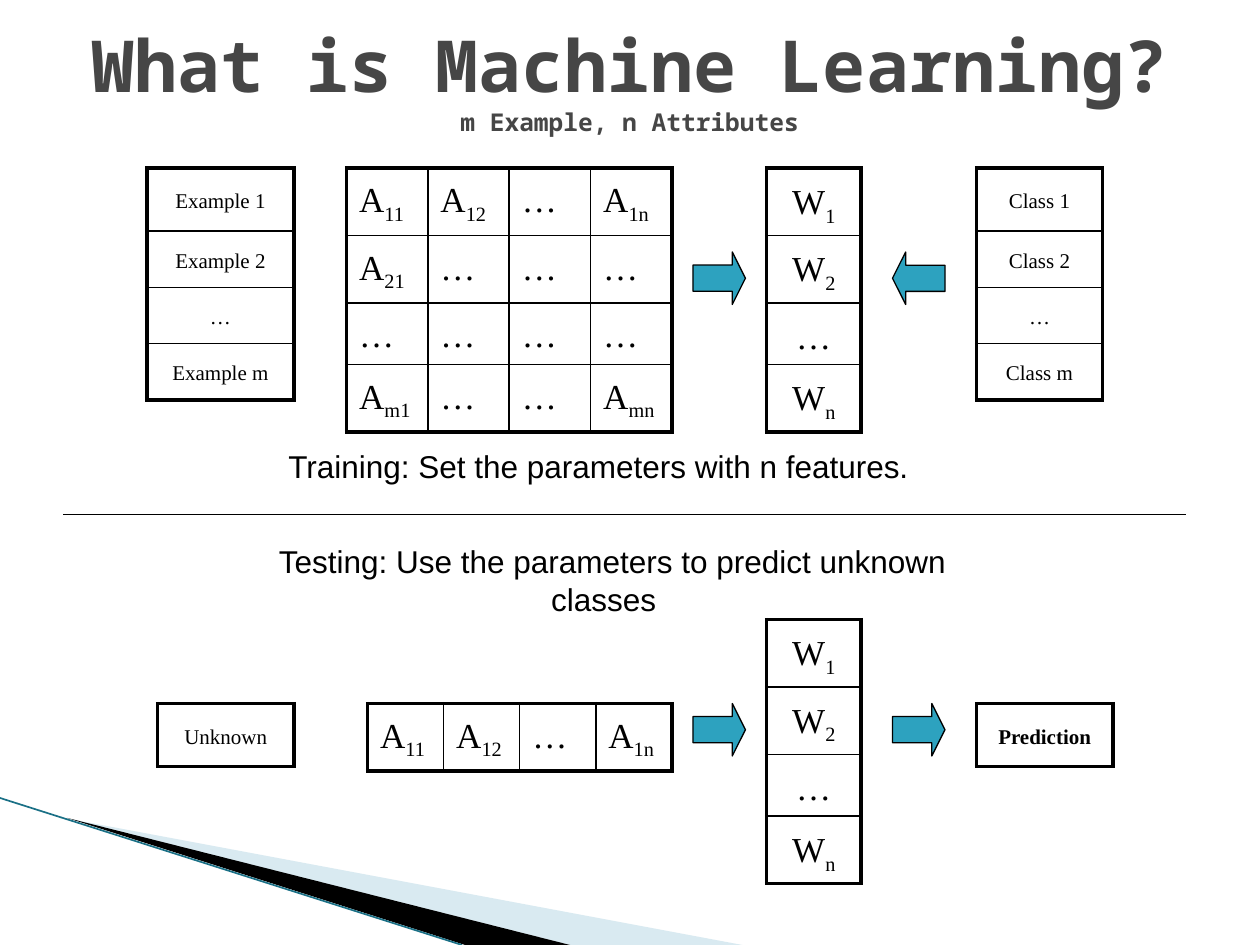
from lxml import etree
from pptx import Presentation
from pptx.dml.color import RGBColor
from pptx.enum.shapes import MSO_CONNECTOR, MSO_SHAPE
from pptx.enum.text import MSO_ANCHOR, PP_ALIGN
from pptx.oxml.ns import qn
from pptx.util import Inches, Pt

STRAIGHT = MSO_CONNECTOR.STRAIGHT
ARROW = MSO_SHAPE.RIGHT_ARROW
MIDDLE, TOP = MSO_ANCHOR.MIDDLE, MSO_ANCHOR.TOP
CENTER, LEFT = PP_ALIGN.CENTER, PP_ALIGN.LEFT

BLACK = RGBColor(0, 0, 0)
GREY = RGBColor(0x46, 0x46, 0x46)
TEAL = RGBColor(0x2D, 0xA2, 0xBF)
DEEP = RGBColor(0x1A, 0x70, 0x86)
PALE = RGBColor(0xA0, 0xCB, 0xDC)

deck = Presentation()
deck.slide_width = Inches(10)
deck.slide_height = Inches(7.5)
UNIT = deck.slide_width / 120


def grid(*nums):
    return [round(n * UNIT) for n in nums]


def add_run(para, text, size, face, color=BLACK, bold=False):
    run = para.add_run()
    run.text = text
    font = run.font
    font.size, font.name, font.bold = Pt(size), face, bold
    font.color.rgb = color
    return run


slide = deck.slides.add_slide(deck.slide_layouts[5])
shapes = slide.shapes

wedges = [
    ([(6.6, 78), (70.7, 90), (54.3, 90)], PALE, 40),
    ([(6.4, 77.9), (54.3, 90), (44.3, 90)], BLACK, 100),
]
for points, color, alpha in wedges:
    start, *rest = [grid(*point) for point in points]
    form = shapes.build_freeform(*start)
    form.add_line_segments(rest)
    wedge = form.convert_to_shape()
    wedge.shadow.inherit = False
    wedge.fill.solid()
    wedge.fill.fore_color.rgb = color
    wedge.line.fill.background()
    tint = wedge._element.spPr.find(".//" + qn("a:srgbClr"))
    etree.SubElement(tint, qn("a:alpha"), val=str(alpha * 1000))

rules = [((0, 76, 44, 90), DEEP, 0.95), ((6, 49, 113, 49), BLACK, 0.75)]
for ends, color, width in rules:
    rule = shapes.add_connector(STRAIGHT, *grid(*ends))
    rule.line.color.rgb = color
    rule.line.width = Pt(width)
    etree.SubElement(rule._element.spPr, qn("a:effectLst"))

title = shapes.title
title.left, title.top, title.width, title.height = grid(6, 0, 108, 15)
title.text_frame.vertical_anchor = MIDDLE
para = title.text_frame.paragraphs[0]
para.alignment = CENTER
add_run(para, "What is Machine Learning?", 41, "Noto Sans Mono", GREY, True)
para.add_line_break()
add_run(para, "m Example, n Attributes", 14, "Noto Sans Mono", GREY, True)

notes = [
    ((25, 42, 64, 4.8), "Training: Set the parameters with n features.", 0),
    ((22, 51, 71, 8.5),
     "Testing: Use the parameters to predict unknown classes", 1.67),
]
for area, text, indent in notes:
    frame = shapes.add_textbox(*grid(*area)).text_frame
    frame.word_wrap = True
    para = frame.paragraphs[0]
    para.alignment = CENTER
    para._p.get_or_add_pPr().set("indent", str(grid(indent)[0]))
    add_run(para, text, 18, "Arial")

TALL = [5.8, 5.8, 5.5, 5.8]
SMALL = [6, 5.4, 5.3, 5.4]
weights = [["W_1"], ["W_2"], ["…"], ["W_n"]]
first = ["A_11", "A_12", "…", "A_1n"]
matrix = [first, ["A_21", "…", "…", "…"], ["…"] * 4,
          ["A_m1", "…", "…", "A_mn"]]
names = [["Example 1"], ["Example 2"], ["…"], ["Example m"]]
labels = [["Class 1"], ["Class 2"], ["…"], ["Class m"]]

tables = [
    (73, 16, 9, TALL, weights, 20, CENTER, False),
    (33, 16, 7.75, TALL, matrix, 20, LEFT, False),
    (14, 16, 14, SMALL, names, 12, CENTER, False),
    (93, 16, 12, SMALL, labels, 12, CENTER, False),
    (15, 67, 13, [6], [["Unknown"]], 12, CENTER, False),
    (35, 67, 7.25, [6], [first], 20, LEFT, False),
    (73, 59, 9, TALL, weights, 20, CENTER, False),
    (93, 67, 13, [6], [["Prediction"]], 12, CENTER, True),
]
for left, top, width, heights, data, size, align, bold in tables:
    rows, cols = len(data), len(data[0])
    area = grid(left, top, width * cols, sum(heights))
    table = shapes.add_table(rows, cols, *area).table
    table.first_row = table.horz_banding = False
    for col in table.columns:
        col.width = grid(width)[0]
    for r, height in enumerate(heights):
        table.rows[r].height = grid(height)[0]
        for c, text in enumerate(data[r]):
            cell = table.cell(r, c)
            cell.margin_top = Inches(0.05) + Pt(size * 0.2)
            cell.vertical_anchor = MIDDLE if align == CENTER else TOP
            edges = {"L": c == 0, "R": c == cols - 1,
                     "T": r == 0, "B": r == rows - 1}
            props = cell._tc.get_or_add_tcPr()
            for side, outer in edges.items():
                weight = Pt(2.25 if outer else 1)
                edge = etree.SubElement(props, qn("a:ln" + side), w=str(weight))
                fill = etree.SubElement(edge, qn("a:solidFill"))
                etree.SubElement(fill, qn("a:srgbClr"), val=str(BLACK))
            cell.fill.background()
            para = cell.text_frame.paragraphs[0]
            para.alignment = align
            base, mark, sub = text.partition("_")
            add_run(para, base, size, "Times New Roman", bold=bold)
            if sub:
                run = add_run(para, sub, size, "Times New Roman")
                run.font._element.set("baseline", "-25000")

for left, top, turn in [(66, 24, 0), (85, 24, 180), (66, 67, 0), (85, 67, 0)]:
    arrow = shapes.add_shape(ARROW, *grid(left, top, 5, 5))
    arrow.adjustments[0], arrow.adjustments[1] = 0.5, 0.25
    arrow.rotation = turn
    arrow.shadow.inherit = False
    arrow.fill.solid()
    arrow.fill.fore_color.rgb = TEAL
    arrow.line.color.rgb = BLACK
    arrow.line.width = Pt(0.75)

deck.save("out.pptx")
